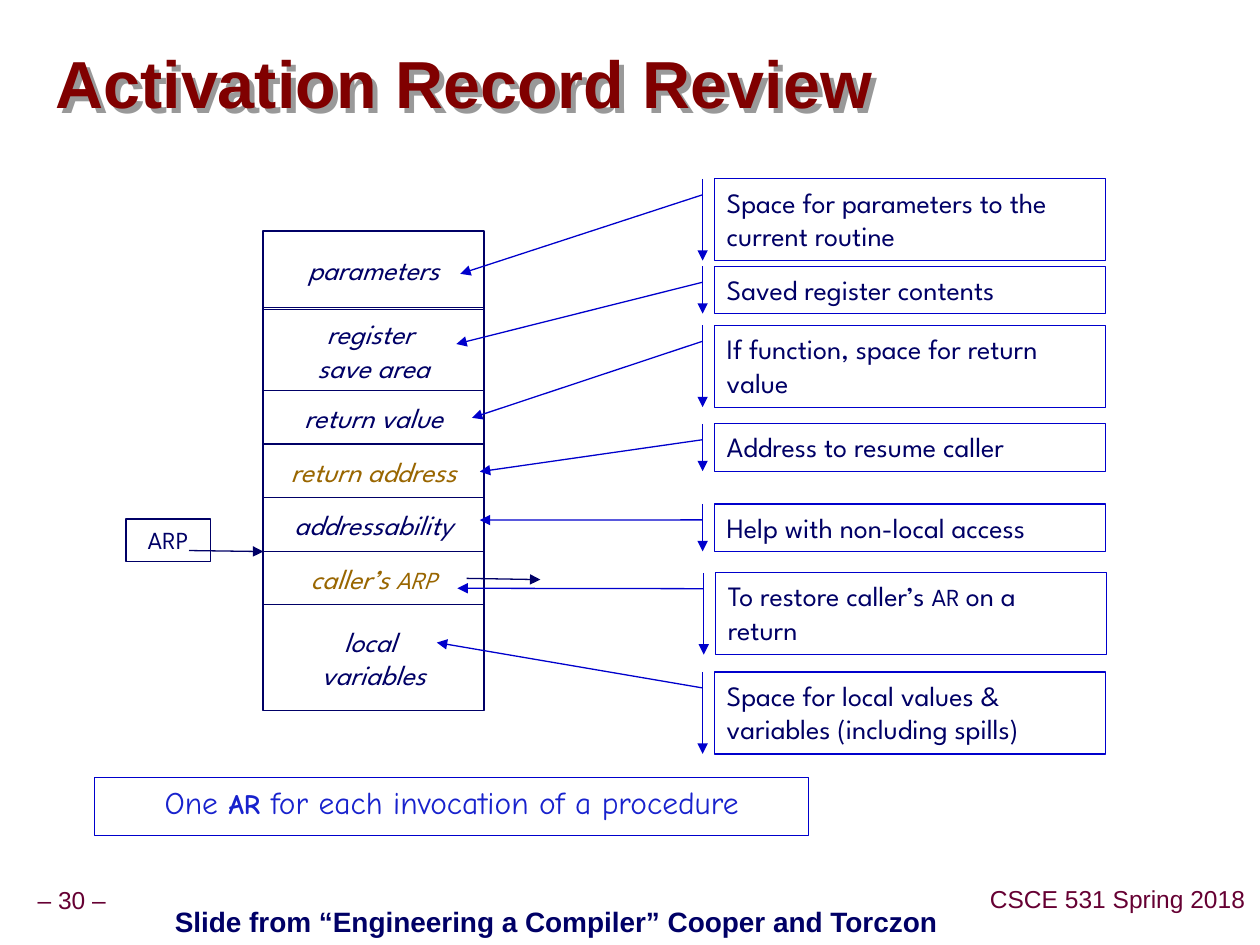
import pptx
import pptx.util
import pptx.dml.color
import pptx.enum.shapes
import pptx.enum.text
import pptx.oxml
import pptx.oxml.ns

Pt = pptx.util.Pt
SHAPES = pptx.enum.shapes.MSO_SHAPE
ALIGN = pptx.enum.text.PP_ALIGN
ANCHOR = pptx.enum.text.MSO_ANCHOR
NAMESPACE = pptx.oxml.ns.nsdecls("a")

COLORS = {"navy": "000066", "blue": "0000CC", "ink": "1822CD", "gold": "996600",
          "maroon": "800000", "plum": "660033", "shade": "999999"}

# Text formats
CELL = {"name": "League Spartan", "size": 16, "italic": True, "color": "navy"}
GOLD_CELL = {**CELL, "color": "gold"}
NOTE = {**CELL, "italic": False}
SMALL = {**NOTE, "size": 14}
BANNER = {"name": "Comic Neue", "size": 18, "color": "ink"}
TITLE = {"name": "Arial", "size": 38, "bold": True, "color": "maroon"}
FOOTER = {"name": "Arial", "size": 14, "color": "plum"}
SOURCE = {"name": "Arial", "size": 16, "bold": True, "color": "navy"}

# Record fields from top to bottom: height, paragraphs of (text, format)
FIELDS = [
    (43.9, [[("parameters", CELL)]]),
    (46.2, [[("register ", CELL)], [("save area", CELL)]]),
    (30.6, [[("return value", CELL)]]),
    (30.6, [[("return address", GOLD_CELL)]]),
    (30.6, [[("addressability", CELL)]]),
    (30.6, [[("caller’s ", GOLD_CELL), ("ARP", {**GOLD_CELL, "size": 14})]]),
    (60.4, [[("local ", CELL)], [("variables", CELL)]]),
]
RECORD_LEFT, RECORD_TOP, RECORD_WIDTH = 150.5, 131.8, 126
FIRST_GAP = 1.3

# Callouts: left, top, number of lines, pointer end (y, x as box fractions), paragraphs
CALLOUTS = [
    (408.2, 102.2, 2, (1.16, -0.65), [[("Space for parameters to the current routine", NOTE)]]),
    (408.2, 152.2, 1, (1.64, -0.66), [[("Saved register contents", NOTE)]]),
    (408.2, 185.9, 2, (1.13, -0.62), [[("If function, space for return value", NOTE)]]),
    (408.2, 242.2, 1, (1.01, -0.6), [[("Address to resume caller", NOTE)]]),
    (408.2, 288, 1, (0.34, -0.6), [[("Help with non-local access", NOTE)]]),
    (408.8, 327.3, 2, (0.19, -0.66), [[("To restore caller’s ", NOTE), ("AR ", SMALL),
                                       ("on a", NOTE)], [("return", NOTE)]]),
    (408.2, 384, 2, (-0.36, -0.71), [[("Space for local values & variables (including spills)", NOTE)]]),
]
CALLOUT_WIDTH = 223.4
CALLOUT_HEIGHT = {1: 27.1, 2: 46.8}
POINTER_START = 9.1

ARROWS = [((108, 314.6), (150.5, 315.2)), ((266.6, 330.5), (308.8, 331.2))]

# Plain text: bounds, spacing, options, content
TEXTS = [
    ((17.3, 504, 47.5, 22.3), 0.9, {"word_wrap": False, "vertical_anchor": ANCHOR.MIDDLE},
     ALIGN.CENTER, 3.6, ("– 30 –", FOOTER)),
    ((561.6, 503.3, 154.1, 22.3), 0.9, {"word_wrap": False, "vertical_anchor": ANCHOR.MIDDLE},
     ALIGN.CENTER, 3.6, ("CSCE 531 Spring 2018", FOOTER)),
    ((31.7, 19.4, 686.2, 61.2), 0.87, {"word_wrap": True, "vertical_anchor": ANCHOR.MIDDLE},
     ALIGN.LEFT, 0, ("Activation Record Review", TITLE)),
    ((72, 515.5, 491.8, 24.5), 0.9, {"word_wrap": True},
     ALIGN.CENTER, 3.6, ("Slide from “Engineering a Compiler” Cooper and Torczon", SOURCE)),
]


def rgb(name):
    return pptx.dml.color.RGBColor.from_string(COLORS[name])


def write(box, paragraphs, align, options, spacing=None):
    frame = box.text_frame
    for key, value in options.items():
        setattr(frame, key, value)
    for index, spans in enumerate(paragraphs):
        para = frame.add_paragraph() if index else frame.paragraphs[0]
        para.alignment = align
        para.line_spacing = spacing
        for text, style in spans:
            span = para.add_run()
            span.text = text
            for key, value in style.items():
                if key == "color":
                    span.font.color.rgb = rgb(value)
                else:
                    setattr(span.font, key, Pt(value) if key == "size" else value)


def add_box(bounds, color, width=0.75, kind=SHAPES.RECTANGLE):
    box = page.shapes.add_shape(kind, *map(Pt, bounds))
    box.shadow.inherit = False
    box.fill.background()
    box.line.color.rgb = rgb(color)
    box.line.width = Pt(width)
    return box


def add_arrowhead(item):
    item.line._get_or_add_ln().append(
        pptx.oxml.parse_xml(f'<a:tailEnd {NAMESPACE} type="triangle"/>'))


deck = pptx.Presentation()
deck.slide_width, deck.slide_height = Pt(720), Pt(540)
page = deck.slides.add_slide(deck.slide_layouts[6])

# Title, footers and source
for bounds, spacing, options, align, inset, content in TEXTS:
    box = page.shapes.add_textbox(*map(Pt, bounds))
    margins = {f"margin_{side}": Pt(inset) for side in ("left", "top", "right", "bottom")}
    write(box, [[content]], align, {**options, **margins}, spacing)
    if content[1] is TITLE:
        box.fill.background()
        box._element.spPr.append(pptx.oxml.parse_xml(
            f'<a:effectLst {NAMESPACE}><a:outerShdw dist="{Pt(4)}" dir="2700000">'
            f'<a:srgbClr val="{COLORS["shade"]}"/></a:outerShdw></a:effectLst>'))

# Activation record
record_height = sum(height for height, _ in FIELDS) + FIRST_GAP
add_box((RECORD_LEFT, RECORD_TOP, RECORD_WIDTH, record_height), "navy", 1)
top = RECORD_TOP
for index, (height, paragraphs) in enumerate(FIELDS):
    field = add_box((RECORD_LEFT, top, RECORD_WIDTH, height), "navy")
    write(field, paragraphs, ALIGN.CENTER,
          {"word_wrap": False, "vertical_anchor": ANCHOR.MIDDLE})
    top += height + (0 if index else FIRST_GAP)

# Record pointer
pointer = add_box((72, 296.6, 48.2, 24.5), "navy")
write(pointer, [[("ARP", SMALL)]], ALIGN.CENTER,
      {"word_wrap": True, "vertical_anchor": ANCHOR.TOP})
for start, end in ARROWS:
    arrow = page.shapes.add_connector(pptx.enum.shapes.MSO_CONNECTOR.STRAIGHT,
                                      *map(Pt, start + end))
    arrow.line.color.rgb = rgb("navy")
    arrow.line.width = Pt(0.75)
    add_arrowhead(arrow)
    arrow._element.spPr.append(pptx.oxml.parse_xml(f"<a:effectLst {NAMESPACE}/>"))

# Callouts
for left, top, lines, target, paragraphs in CALLOUTS:
    height = CALLOUT_HEIGHT[lines]
    callout = add_box((left, top, CALLOUT_WIDTH, height), "blue",
                      kind=SHAPES.LINE_CALLOUT_1_BORDER_AND_ACCENT_BAR)
    for index, value in enumerate((POINTER_START / height, -0.03, *target)):
        callout.adjustments[index] = value
    add_arrowhead(callout)
    write(callout, paragraphs, ALIGN.LEFT,
          {"word_wrap": True, "vertical_anchor": ANCHOR.TOP})

# Banner
banner = add_box((54, 444.2, 408.2, 33.1), "blue")
write(banner, [[("One ", BANNER), ("AR", {**BANNER, "size": 16, "bold": True}),
                (" for each invocation of a procedure", BANNER)]],
      ALIGN.CENTER, {"word_wrap": True, "vertical_anchor": ANCHOR.TOP})

deck.save("out.pptx")
